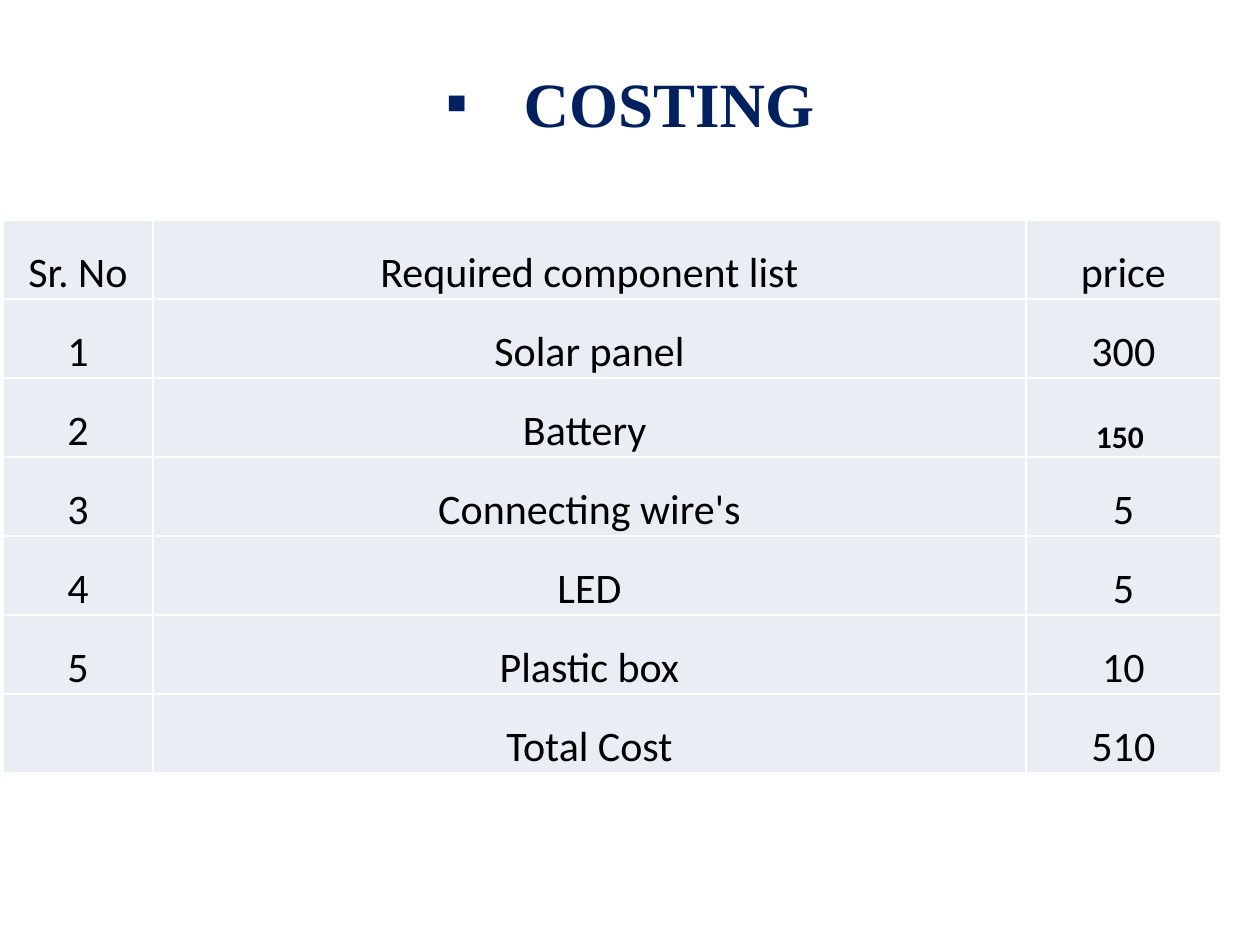
from dataclasses import dataclass

from lxml.etree import SubElement
from pptx import Presentation
from pptx.dml.color import RGBColor
from pptx.enum.text import MSO_ANCHOR as Anchor, PP_ALIGN as Align
from pptx.oxml.ns import qn
from pptx.util import Emu, Pt

EMU_PER_PX = 914400 // 126


@dataclass(frozen=True)
class Theme:
    heading_font: str = "Times New Roman"
    body_font: str = "Calibri"
    heading_color: str = "002060"
    body_color: str = "000000"
    cell_fill: str = "E9EDF4"
    border: str = "FFFFFF"
    heading_size: int = 36
    body_size: int = 24
    small_size: int = 18


THEME = Theme()
COLUMN_WIDTHS = (150, 873, 195)
ROW_HEIGHT = 79
COSTS = (
    ("Sr. No", "Required component list", "price"),
    ("1", "Solar panel", "300"),
    ("2", "Battery ", "150 "),
    ("3", "Connecting wire's", "5"),
    ("4", "LED", "5"),
    ("5", "Plastic box", "10"),
    ("", "Total Cost", "510"),
)
BATTERY_PRICE = (2, 2)


def px(length):
    return Emu(length * EMU_PER_PX)


def write(frame, text, *, size=THEME.body_size, font=THEME.body_font,
          color=THEME.body_color, bold=False):
    paragraph = frame.paragraphs[0]
    paragraph.alignment = Align.CENTER
    run = paragraph.add_run()
    run.text = text
    run.font.name = font
    run.font.size = Pt(size)
    run.font.bold = bold
    run.font.color.rgb = RGBColor.from_string(color)
    return paragraph


def add_bullet(paragraph, symbol, indent):
    props = paragraph._p.get_or_add_pPr()
    props.set("marL", str(px(indent)))
    props.set("indent", str(-px(indent)))
    SubElement(props, qn("a:buFont"), typeface="Arial")
    SubElement(props, qn("a:buChar"), char=symbol)


def add_heading(slide, text):
    box = slide.shapes.add_textbox(0, 0, px(1260), px(204))
    frame = box.text_frame
    frame.word_wrap = True
    frame.vertical_anchor = Anchor.MIDDLE
    heading = write(frame, text, size=THEME.heading_size, bold=True,
                    font=THEME.heading_font, color=THEME.heading_color)
    add_bullet(heading, "▪", indent=78)


def style_cell(cell):
    cell.vertical_anchor = Anchor.BOTTOM
    cell.margin_left = cell.margin_right = cell.margin_top = px(1)
    cell.margin_bottom = 0
    # Borders come before the fill in the cell properties
    props = cell._tc.get_or_add_tcPr()
    for side in ("lnL", "lnR", "lnT", "lnB"):
        line = SubElement(props, qn(f"a:{side}"), w=str(Pt(1)))
        paint = SubElement(line, qn("a:solidFill"))
        SubElement(paint, qn("a:srgbClr"), val=THEME.border)
    cell.fill.solid()
    cell.fill.fore_color.rgb = RGBColor.from_string(THEME.cell_fill)


def add_cost_table(slide, left, top):
    costs = slide.shapes.add_table(
        len(COSTS), len(COLUMN_WIDTHS), px(left), px(top),
        px(sum(COLUMN_WIDTHS)), px(ROW_HEIGHT * len(COSTS))).table
    costs.first_row = costs.horz_banding = False
    for column, width in zip(costs.columns, COLUMN_WIDTHS):
        column.width = px(width)
    for r, entries in enumerate(COSTS):
        costs.rows[r].height = px(ROW_HEIGHT)
        for c, entry in enumerate(entries):
            cell = costs.cell(r, c)
            style_cell(cell)
            small = (r, c) == BATTERY_PRICE
            if entry:
                write(cell.text_frame, entry, bold=small,
                      size=THEME.small_size if small else THEME.body_size)


def main():
    deck = Presentation()
    deck.slide_width, deck.slide_height = px(1260), px(945)
    slide = deck.slides.add_slide(deck.slide_layouts[6])

    # Heading
    add_heading(slide, "COSTING")

    # Component prices and total
    add_cost_table(slide, left=3, top=220)

    deck.save("out.pptx")


if __name__ == "__main__":
    main()
